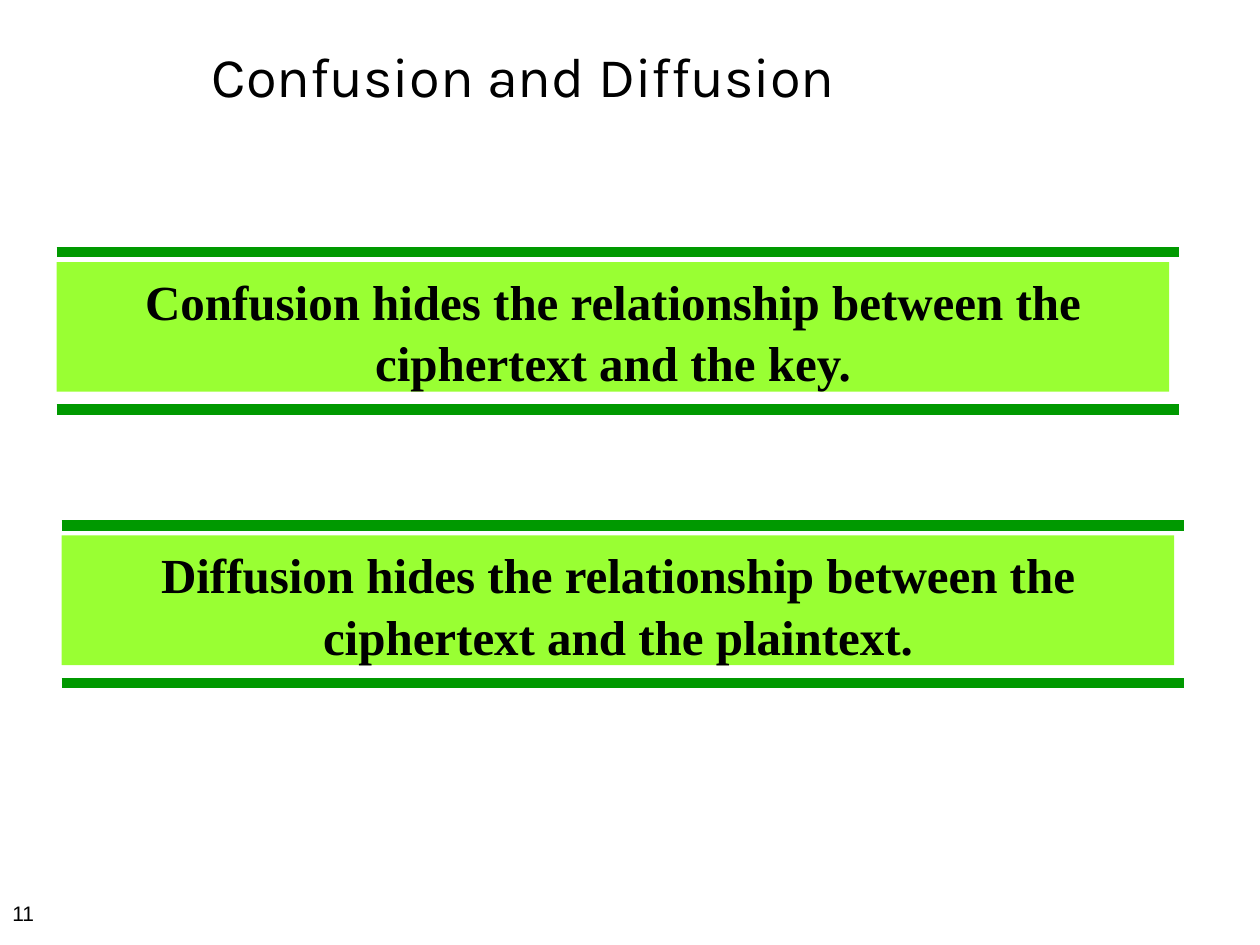
from pptx import Presentation
from pptx.dml.color import RGBColor
from pptx.enum import shapes, text
from pptx.oxml import parse_xml
from pptx.oxml.ns import nsdecls
from pptx.util import Inches, Pt

# Content: each banner has its text, left edge and top rule
TITLE = "Confusion and Diffusion"
BANNERS = [
    ("Diffusion hides the relationship between the ciphertext and the plaintext.",
     0.49, 4.17),
    ("Confusion hides the relationship between the ciphertext and the key.",
     0.45, 2.0),
]
NUMBER = "11"

THEME = {
    "ink": RGBColor(0, 0, 0),
    "band": RGBColor(0x99, 0xFF, 0x33),
    "rule": RGBColor(0, 0x99, 0),
    "title": ("Karla", 32, False),
    "body": ("Times New Roman", 28, True),
    "number": ("Arial", 12, False),
}
BAND_W, BAND_H, BAND_GAP = 8.83, 1.03, 0.08
RULE_W, RULE_GAP, RULE_PT = 8.91, 1.25, 6


def style(par, role, align):
    name, size, bold = THEME[role]
    par.alignment = align
    for run in par.runs:
        font = run.font
        font.name, font.size, font.bold = name, Pt(size), bold
        font.color.rgb = THEME["ink"]


def add_rule(slide, left, top):
    line = slide.shapes.add_connector(
        shapes.MSO_CONNECTOR.STRAIGHT, Inches(left), Inches(top),
        Inches(left + RULE_W), Inches(top))
    line.line.color.rgb = THEME["rule"]
    line.line.width = Pt(RULE_PT)
    line._element.spPr.append(parse_xml(f"<a:effectLst {nsdecls('a')}/>"))


def add_banner(slide, words, left, top):
    band = slide.shapes.add_shape(
        shapes.MSO_SHAPE.RECTANGLE, Inches(left), Inches(top + BAND_GAP),
        Inches(BAND_W), Inches(BAND_H))
    band.shadow.inherit = False
    band.fill.solid()
    band.fill.fore_color.rgb = THEME["band"]
    band.line.fill.background()
    frame = band.text_frame
    frame.text = words
    frame.word_wrap = True
    frame.vertical_anchor = text.MSO_ANCHOR.TOP
    par = frame.paragraphs[0]
    par.line_spacing = 1.05
    style(par, "body", text.PP_ALIGN.CENTER)
    for step in (0, RULE_GAP):
        add_rule(slide, left, top + step)


def main():
    deck = Presentation()
    deck.slide_width, deck.slide_height = Inches(10), Inches(7.5)
    slide = deck.slides.add_slide(deck.slide_layouts[5])

    # Title
    title = slide.shapes.title
    title.left, title.top = Inches(1.58), Inches(0.23)
    title.width, title.height = Inches(7.99), Inches(0.68)
    title.text_frame.text = TITLE
    title.text_frame.vertical_anchor = text.MSO_ANCHOR.BOTTOM
    style(title.text_frame.paragraphs[0], "title", text.PP_ALIGN.LEFT)

    # Banners between their rules
    for words, left, top in BANNERS:
        add_banner(slide, words, left, top)

    # Slide number
    box = slide.shapes.add_textbox(0, Inches(7.1), Inches(2.25), Inches(0.4))
    box.text_frame.word_wrap = True
    box.text_frame.text = NUMBER
    style(box.text_frame.paragraphs[0], "number", text.PP_ALIGN.LEFT)

    deck.save("out.pptx")


if __name__ == "__main__":
    main()
